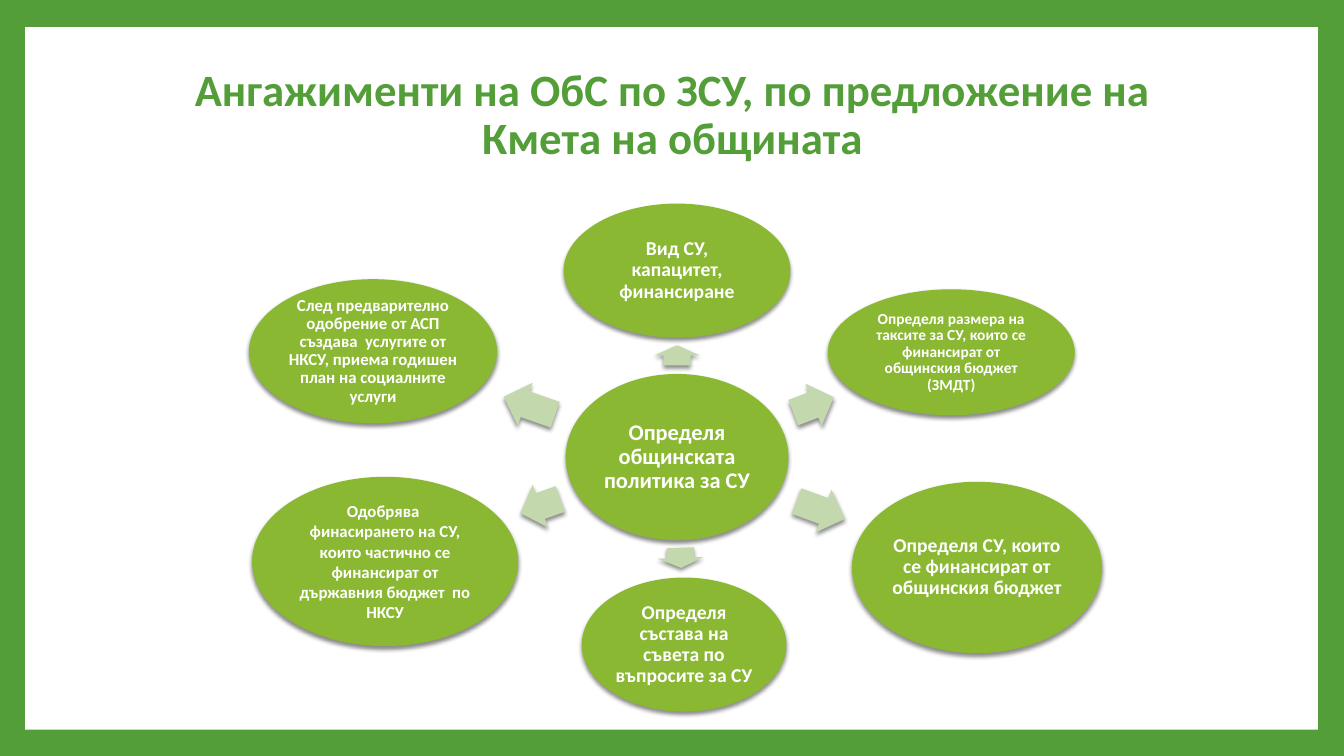
from math import atan2, cos, degrees, sin

from lxml import etree
from pptx import Presentation
from pptx.dml.color import RGBColor
from pptx.enum.shapes import MSO_SHAPE
from pptx.enum.text import MSO_ANCHOR, PP_ALIGN
from pptx.oxml.ns import qn
from pptx.util import Inches, Pt

RECTANGLE = MSO_SHAPE.RECTANGLE
OVAL = MSO_SHAPE.OVAL
ARROW = MSO_SHAPE.RIGHT_ARROW
MIDDLE = MSO_ANCHOR.MIDDLE
CENTER = PP_ALIGN.CENTER

# Content
TITLE = "Ангажименти на ОбС по ЗСУ, по предложение на Кмета на общината"
HUB = ("Определя общинската политика за СУ", (5.61, 3.71, 2.21, 1.65), 16, 0.9)
# Text, (left, top, width, height), text size, line spacing,
# distance of the arrow from the hub centre, arrow length
SPOKES = [
    ("Вид СУ, капацитет, финансиране",
     (5.59, 2.02, 2.25, 1.33), 14, 0.9, 1.01, 0.2),
    ("Определя размера на таксите за СУ, които се финансират от общинския бюджет (ЗМДТ)",
     (8.21, 2.87, 2.45, 1.25), 11, 0.9, 1.45, 0.43),
    ("Определя СУ, които се финансират от общинския бюджет",
     (8.45, 4.78, 2.48, 1.7), 14, 0.9, 1.52, 0.51),
    ("Определя състава на съвета по въпросите за СУ",
     (5.77, 5.73, 2.03, 1.33), 14, 0.9, 1.0, 0.2),
    ("Одобрява  финасирането на СУ, които частично се финансират от държавния бюджет  по НКСУ",
     (2.5, 4.73, 2.64, 1.68), 12, 1.0, 1.44, 0.42),
    ("След предварително одобрение от АСП създава  услугите от НКСУ, приема годишен план на социалните услуги",
     (2.47, 2.77, 2.46, 1.43), 12, 0.9, 1.55, 0.54),
]

# Style
FONT = "Calibri"
GREEN, LIME, PALE, WHITE = "549E39", "8AB833", "C4D8AE", "FFFFFF"
ARROW_HEIGHT = 0.45
OVAL_INSET = 0.02


def color(value):
    return RGBColor.from_string(value)


def add_shadow(shape):
    effects = shape._element.spPr.find(qn("a:effectLst"))
    outer = etree.SubElement(effects, qn("a:outerShdw"), blurRad=str(Pt(3)),
                             dist=str(Pt(2)), dir="5400000", rotWithShape="0")
    tone = etree.SubElement(outer, qn("a:srgbClr"), val="000000")
    etree.SubElement(tone, qn("a:alpha"), val="45000")


def add_shape(kind, place, fill, shadow=True):
    shape = page.shapes.add_shape(kind, *map(Inches, place))
    shape.fill.solid()
    shape.fill.fore_color.rgb = color(fill)
    shape.line.fill.background()
    shape.shadow.inherit = False
    if shadow:
        add_shadow(shape)
    return shape


def write(shape, text, size, spacing, ink):
    frame = shape.text_frame
    frame.word_wrap = True
    frame.vertical_anchor = MIDDLE
    frame.text = text
    para = frame.paragraphs[0]
    para.alignment = CENTER
    para.line_spacing = spacing
    font = para.runs[0].font
    font.name, font.size, font.bold = FONT, Pt(size), True
    font.color.rgb = color(ink)


def add_oval(text, place, size, spacing):
    oval = add_shape(OVAL, place, LIME)
    write(oval, text, size, spacing, WHITE)
    frame = oval.text_frame
    frame.margin_left = frame.margin_right = Inches(OVAL_INSET)
    frame.margin_top = frame.margin_bottom = Inches(OVAL_INSET)


def center(place):
    left, top, width, height = place
    return left + width / 2, top + height / 2


def add_arrow(place, distance, length):
    hub_x, hub_y = center(HUB[1])
    x, y = center(place)
    angle = atan2(y - hub_y, x - hub_x)
    left = hub_x + distance * cos(angle) - length / 2
    top = hub_y + distance * sin(angle) - ARROW_HEIGHT / 2
    arrow = add_shape(ARROW, (left, top, length, ARROW_HEIGHT), PALE)
    arrow.adjustments[0] = 0.6
    arrow.adjustments[1] = 0.5
    arrow.rotation = degrees(angle) % 360


# Page with green frame
deck = Presentation()
deck.slide_width, deck.slide_height = Inches(13.33), Inches(7.5)
page = deck.slides.add_slide(deck.slide_layouts[6])
page.background.fill.solid()
page.background.fill.fore_color.rgb = color(GREEN)
add_shape(RECTANGLE, (0.25, 0.27, 12.82, 6.97), WHITE, shadow=False)

# Title
title = page.shapes.add_textbox(*map(Inches, (1.27, 0.41, 10.8, 1.48)))
write(title, TITLE, 32, 0.9, GREEN)

# Hub and spokes
add_oval(*HUB)
for text, place, size, spacing, distance, length in SPOKES:
    add_arrow(place, distance, length)
    add_oval(text, place, size, spacing)

deck.save("out.pptx")
